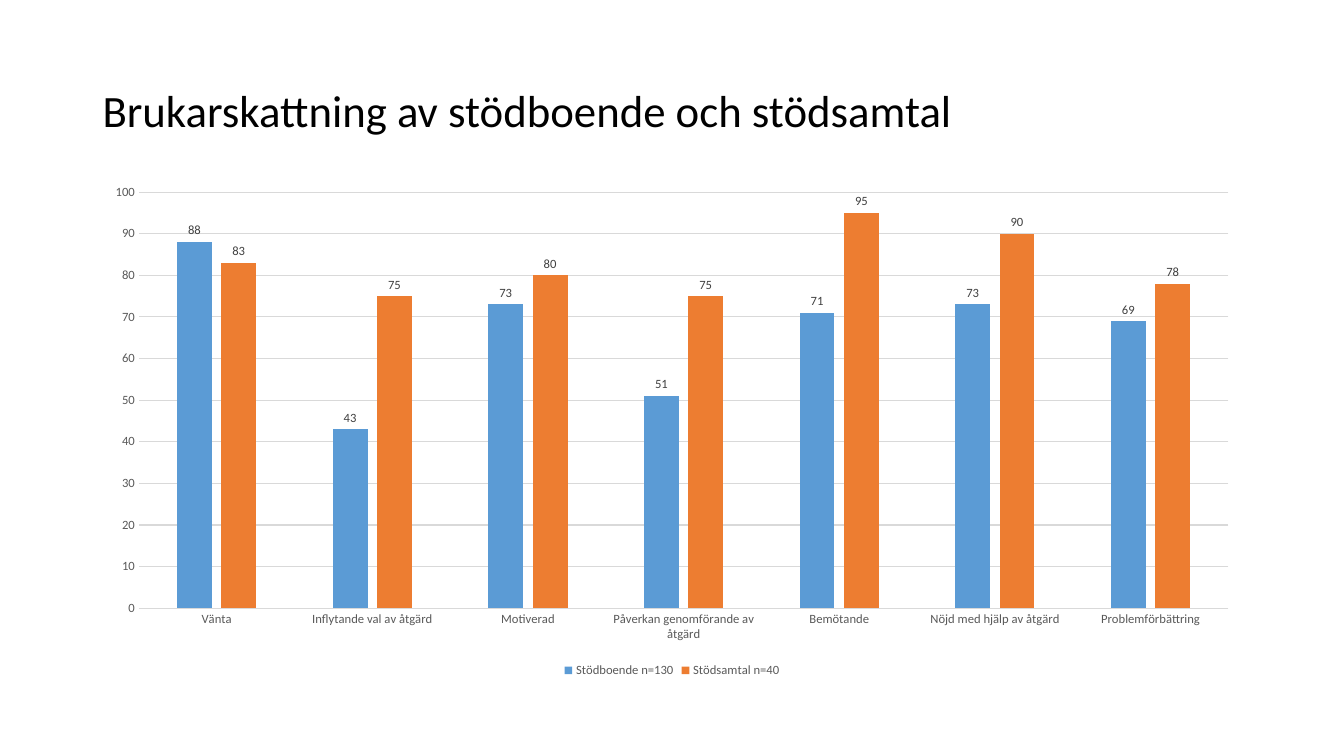
from pptx import Presentation
from pptx.chart.data import CategoryChartData
from pptx.dml.color import RGBColor
from pptx.enum.chart import XL_CHART_TYPE, XL_LABEL_POSITION, XL_LEGEND_POSITION, XL_TICK_MARK
from pptx.enum.text import MSO_ANCHOR, MSO_AUTO_SIZE, PP_ALIGN
from pptx.util import Cm, Pt

COLUMNS = XL_CHART_TYPE.COLUMN_CLUSTERED
OUTSIDE = XL_LABEL_POSITION.OUTSIDE_END
BOTTOM = XL_LEGEND_POSITION.BOTTOM
NO_TICK = XL_TICK_MARK.NONE
MIDDLE = MSO_ANCHOR.MIDDLE
NO_FIT = MSO_AUTO_SIZE.NONE
LEFT = PP_ALIGN.LEFT

CATEGORIES = ["Vänta", "Inflytande val av åtgärd", "Motiverad",
              "Påverkan genomförande av åtgärd", "Bemötande",
              "Nöjd med hjälp av åtgärd", "Problemförbättring"]
RATINGS = [
    ("Stödboende n=130", "5B9BD5", [88, 43, 73, 51, 71, 73, 69]),
    ("Stödsamtal n=40", "ED7D31", [83, 75, 80, 75, 95, 90, 78]),
]


def color(hex_string):
    return RGBColor.from_string(hex_string)


class SlideBuilder:
    """Holds the style and the current slide."""

    font_name = "Calibri"
    title_color = "000000"
    axis_color = "595959"
    label_color = "404040"
    grid_color = "D9D9D9"

    def __init__(self, presentation):
        self.slide = presentation.slides.add_slide(presentation.slide_layouts[5])

    def style_font(self, font, size, hex_string):
        font.name = self.font_name
        font.size = Pt(size)
        font.bold = False
        font.color.rgb = color(hex_string)

    def style_line(self, line):
        line.color.rgb = color(self.grid_color)
        line.width = Pt(0.75)

    def add_title(self, text, left, top, width, height):
        title = self.slide.shapes.title
        title.left, title.top, title.width, title.height = left, top, width, height
        frame = title.text_frame
        frame.text = text
        frame.word_wrap = True
        frame.auto_size = NO_FIT
        frame.vertical_anchor = MIDDLE
        paragraph = frame.paragraphs[0]
        paragraph.alignment = LEFT
        paragraph.line_spacing = 0.9
        self.style_font(paragraph.runs[0].font, 32, self.title_color)

    def add_column_chart(self, categories, ratings, left, top, width, height):
        data = CategoryChartData()
        data.categories = categories
        for name, _, values in ratings:
            data.add_series(name, values)
        chart = self.slide.shapes.add_chart(COLUMNS, left, top, width, height, data).chart
        self.style_font(chart.font, 10, self.title_color)
        chart.has_title = False
        chart.has_legend = True
        chart.legend.position = BOTTOM
        chart.legend.include_in_layout = False
        self.style_font(chart.legend.font, 9, self.axis_color)
        self.style_axes(chart)

        plot = chart.plots[0]
        plot.gap_width = 219
        plot.overlap = -27
        plot.vary_by_categories = False
        for series, (_, fill_color, _) in zip(plot.series, ratings):
            series.format.fill.solid()
            series.format.fill.fore_color.rgb = color(fill_color)
            series.invert_if_negative = False
            labels = series.data_labels
            labels.show_value = True
            labels.position = OUTSIDE
            self.style_font(labels.font, 9, self.label_color)

    def style_axes(self, chart):
        for axis in (chart.category_axis, chart.value_axis):
            axis.major_tick_mark = NO_TICK
            axis.minor_tick_mark = NO_TICK
            self.style_font(axis.tick_labels.font, 9, self.axis_color)
        self.style_line(chart.category_axis.format.line)
        value_axis = chart.value_axis
        value_axis.minimum_scale = 0
        value_axis.maximum_scale = 100
        value_axis.major_unit = 10
        value_axis.format.line.fill.background()
        self.style_line(value_axis.major_gridlines.format.line)


def main():
    presentation = Presentation()
    presentation.slide_width = Cm(33.87)
    presentation.slide_height = Cm(19.05)
    builder = SlideBuilder(presentation)
    left, width = Cm(2.33), Cm(29.21)
    builder.add_title("Brukarskattning av stödboende och stödsamtal",
                      left, Cm(1), width, Cm(3.68))
    builder.add_column_chart(CATEGORIES, RATINGS, left, Cm(4.4), width, Cm(12.78))
    presentation.save("out.pptx")


if __name__ == "__main__":
    main()
